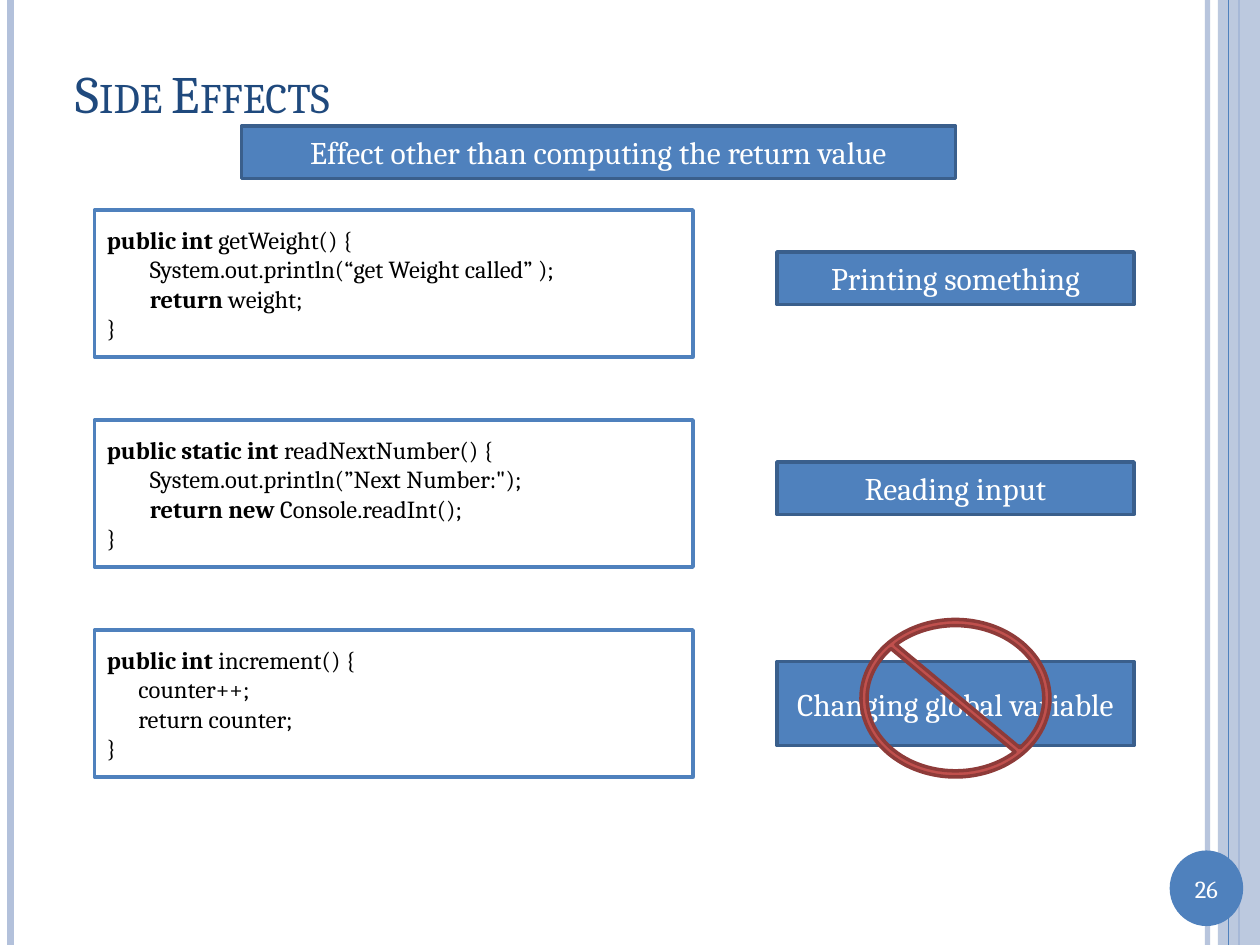
from lxml import etree
from pptx import Presentation, util as u
from pptx.dml.color import RGBColor
from pptx.enum import shapes, text
from pptx.oxml.ns import qn

FONT = "Cambria"
BLUE, PALE, NAVY, EDGE = "4F81BD", "B3C1DB", "1F497D", "3A5F8C"
WHITE, BLACK, RED, DARK_RED = "FFFFFF", "000000", "C0504D", "8E3B39"
COLUMNS, ROWS = 120, 90


def color(value):
    """Turn a hex string into a colour."""
    return RGBColor.from_string(value)


def set_alpha(fill, percent):
    """Make a solid fill partly transparent."""
    rgb = fill._xPr.find(qn("a:solidFill"))[0]
    etree.SubElement(rgb, qn("a:alpha")).set("val", str(percent * 1000))


def add_text(paragraph, content, size=18, fill=WHITE, bold=False, small_caps=False):
    """Append one formatted run to a paragraph."""
    run = paragraph.add_run()
    run.text = content
    run.font.name, run.font.size, run.font.bold = FONT, u.Pt(size), bold
    run.font.color.rgb = color(fill)
    if small_caps:
        run._r.get_or_add_rPr().set("cap", "small")


class SlideBuilder:
    """Draw elements on a slide measured in grid columns and rows."""

    def __init__(self, presentation):
        """Add a blank slide and work out the grid cell."""
        self.slide = presentation.slides.add_slide(presentation.slide_layouts[6])
        self.cell_width = presentation.slide_width / COLUMNS
        self.cell_height = presentation.slide_height / ROWS

    def place(self, column, row, width=0, height=0):
        """Convert a grid area to slide lengths."""
        return (round(column * self.cell_width), round(row * self.cell_height),
                round(width * self.cell_width), round(height * self.cell_height))

    def stripe(self, column, width, fill, alpha=None):
        """Draw a line over the full height of the slide."""
        left, top, _, height = self.place(column, 0, 0, ROWS)
        line = self.slide.shapes.add_connector(
            shapes.MSO_CONNECTOR.STRAIGHT, left, top, left, height)
        line.line.width = u.Pt(width)
        line.line.color.rgb = color(fill)
        if alpha:
            set_alpha(line.line.fill, alpha)
        etree.SubElement(line._element.spPr, qn("a:effectLst"))

    def shape(self, kind, area, fill, line=None, alpha=None):
        """Draw a preset shape with an optional outline."""
        shape = self.slide.shapes.add_shape(kind, *self.place(*area))
        shape.shadow.inherit = False
        shape.fill.solid()
        shape.fill.fore_color.rgb = color(fill)
        if alpha:
            set_alpha(shape.fill, alpha)
        if line:
            shape.line.color.rgb = color(line)
            shape.line.width = u.Pt(2)
        else:
            shape.line.fill.background()
        return shape

    def label(self, area, content):
        """Draw a blue box with centred text."""
        box = self.shape(shapes.MSO_SHAPE.RECTANGLE, area, BLUE, EDGE)
        paragraph = box.text_frame.paragraphs[0]
        paragraph.alignment = text.PP_ALIGN.CENTER
        add_text(paragraph, content)

    def code(self, area, lines, indent):
        """Draw a code box whose inner lines are indented."""
        frame = self.shape(shapes.MSO_SHAPE.RECTANGLE, area, WHITE, BLUE).text_frame
        for index, (keyword, rest) in enumerate(lines):
            paragraph = frame.paragraphs[0] if index == 0 else frame.add_paragraph()
            paragraph.alignment = text.PP_ALIGN.LEFT
            if 0 < index < len(lines) - 1:
                paragraph._p.get_or_add_pPr().set("marL", str(u.Inches(indent)))
            if keyword:
                add_text(paragraph, keyword, size=14, fill=BLACK, bold=True)
            add_text(paragraph, rest, size=14, fill=BLACK)

    def text_box(self, area, content, alignment=text.PP_ALIGN.LEFT, **style):
        """Add one line of text, centred vertically in its area."""
        frame = self.slide.shapes.add_textbox(*self.place(*area)).text_frame
        frame.word_wrap = True
        frame.vertical_anchor = text.MSO_ANCHOR.MIDDLE
        frame.paragraphs[0].alignment = alignment
        add_text(frame.paragraphs[0], content, **style)

    def no_sign(self, area):
        """Draw a red prohibition sign."""
        sign = self.shape(shapes.MSO_SHAPE.NO_SYMBOL, area, RED, DARK_RED)
        sign.adjustments[0] = 0.039


EXAMPLES = [
    ("Printing something", 5, 0.34, [
        ("public int ", "getWeight() {"),
        ("", "System.out.println(“get Weight called” );"),
        ("return", " weight;"),
        ("", "}")]),
    ("Reading input", 5, 0.34, [
        ("public static int", " readNextNumber() {"),
        ("", "System.out.println(”Next Number:\");"),
        ("return new", " Console.readInt();"),
        ("", "}")]),
    ("Changing global variable", 8, 0.25, [
        ("public int", " increment() {"),
        ("", "counter++;"),
        ("", "return counter;"),
        ("", "}")]),
]


def main():
    """Build and save the slide."""
    presentation = Presentation()
    presentation.slide_width, presentation.slide_height = u.Inches(10), u.Inches(7.5)
    builder = SlideBuilder(presentation)

    builder.stripe(115, 3, PALE, alpha=93)
    builder.stripe(1, 4.5, PALE)
    builder.stripe(118, 1.5, BLUE)
    builder.shape(shapes.MSO_SHAPE.RECTANGLE, (116, 0, 4, ROWS), PALE, alpha=87)
    builder.stripe(117, 0.75, BLUE)
    builder.shape(shapes.MSO_SHAPE.OVAL, (111.4, 81, 7, 7.2), BLUE)
    builder.text_box((111.4, 82.6, 7, 4), "26", text.PP_ALIGN.CENTER, size=14)
    builder.text_box((6, 3.6, 110, 10.4), "Side Effects",
                     size=30, fill=NAVY, small_caps=True)

    code_height = 14
    for index, (effect, height, indent, lines) in enumerate(EXAMPLES):
        top = 20 + 20 * index
        builder.code((9, top, 57, code_height), lines, indent)
        label_top = top + (code_height - height) // 2
        builder.label((74, label_top, 34, height), effect)
    builder.label((23, 12, 68, 5), "Effect other than computing the return value")
    builder.no_sign((82, 59, 18, 15))

    presentation.save("out.pptx")


if __name__ == "__main__":
    main()
